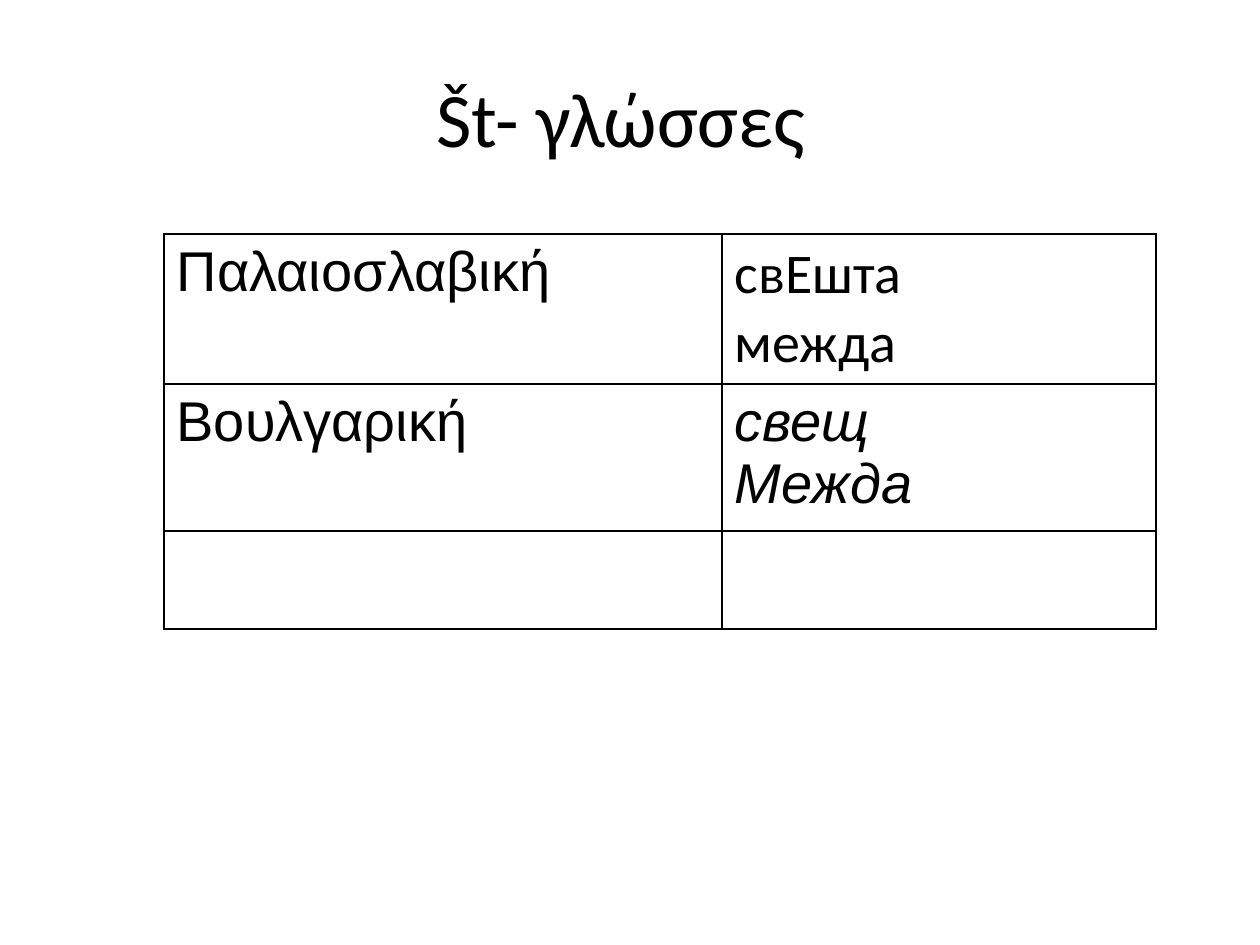
"""Build a slide that compares words in the Št- languages."""
from dataclasses import dataclass

from lxml import etree
from pptx import Presentation
from pptx.dml.color import RGBColor
from pptx.enum.text import MSO_ANCHOR, PP_ALIGN
from pptx.oxml.ns import qn
from pptx.util import Emu, Pt

MIDDLE = MSO_ANCHOR.MIDDLE
LEFT, CENTER = PP_ALIGN.LEFT, PP_ALIGN.CENTER
BORDER_SIDES = ("a:lnL", "a:lnR", "a:lnT", "a:lnB")


@dataclass(frozen=True)
class Theme:
    ink: str = "000000"
    title_size: int = 44
    body_size: int = 32
    border_width: int = 1
    title_font: str = "Calibri"
    body_font: str = "Arial"


def px(length):
    return Emu(round(length * 914400 / 126))


def write_text(frame, text, *, font, size, color, italic=False, align=LEFT):
    for index, line in enumerate(text.split("\n")):
        paragraph = frame.paragraphs[0] if index == 0 else frame.add_paragraph()
        paragraph.alignment = align
        run = paragraph.add_run()
        run.text = line
        run.font.name = font
        run.font.size = Pt(size)
        run.font.italic = italic
        run.font.color.rgb = RGBColor.from_string(color)


class SlideBuilder:
    def __init__(self, slide, theme):
        self.slide = slide
        self.theme = theme

    def title(self, text, left, top, width, height):
        shape = self.slide.shapes.add_textbox(px(left), px(top), px(width), px(height))
        frame = shape.text_frame
        frame.word_wrap = True
        frame.vertical_anchor = MIDDLE
        write_text(frame, text, font=self.theme.title_font, size=self.theme.title_size,
                   color=self.theme.ink, align=CENTER)

    def borders(self, cell):
        properties = cell._tc.get_or_add_tcPr()
        for position, side in enumerate(BORDER_SIDES):
            line = etree.Element(qn(side), w=str(Pt(self.theme.border_width)))
            fill = etree.SubElement(line, qn("a:solidFill"))
            etree.SubElement(fill, qn("a:srgbClr"), val=self.theme.ink)
            properties.insert(position, line)

    def table(self, rows, left, top, widths, heights):
        frame = self.slide.shapes.add_table(
            len(heights), len(widths), px(left), px(top), px(sum(widths)), px(sum(heights)))
        table = frame.table
        table.first_row = table.horz_banding = False
        for column, width in zip(table.columns, widths):
            column.width = px(width)
        for row, height in zip(table.rows, heights):
            row.height = px(height)
        for cell in table.iter_cells():
            cell.fill.background()
            self.borders(cell)
        for row, entries in zip(table.rows, rows):
            for cell, (text, style) in zip(row.cells, entries):
                style = {"font": self.theme.body_font, **style}
                write_text(cell.text_frame, text, size=self.theme.body_size,
                           color=self.theme.ink, **style)


def main():
    presentation = Presentation()
    presentation.slide_width, presentation.slide_height = px(1260), px(945)
    slide = presentation.slides.add_slide(presentation.slide_layouts[6])
    theme = Theme()
    builder = SlideBuilder(slide, theme)
    builder.title("Št- γλώσσες ", 63, 38, 1134, 157)
    language_rows = [
        [("Παλαιοσλαβική", {}), ("свEшта\nмежда", {"font": theme.title_font})],
        [("Βουλγαρική", {}), ("свещ\nМежда", {"italic": True})],
    ]
    builder.table(language_rows, 164, 234, widths=(558, 434), heights=(150, 138, 98))
    presentation.save("out.pptx")


if __name__ == "__main__":
    main()
